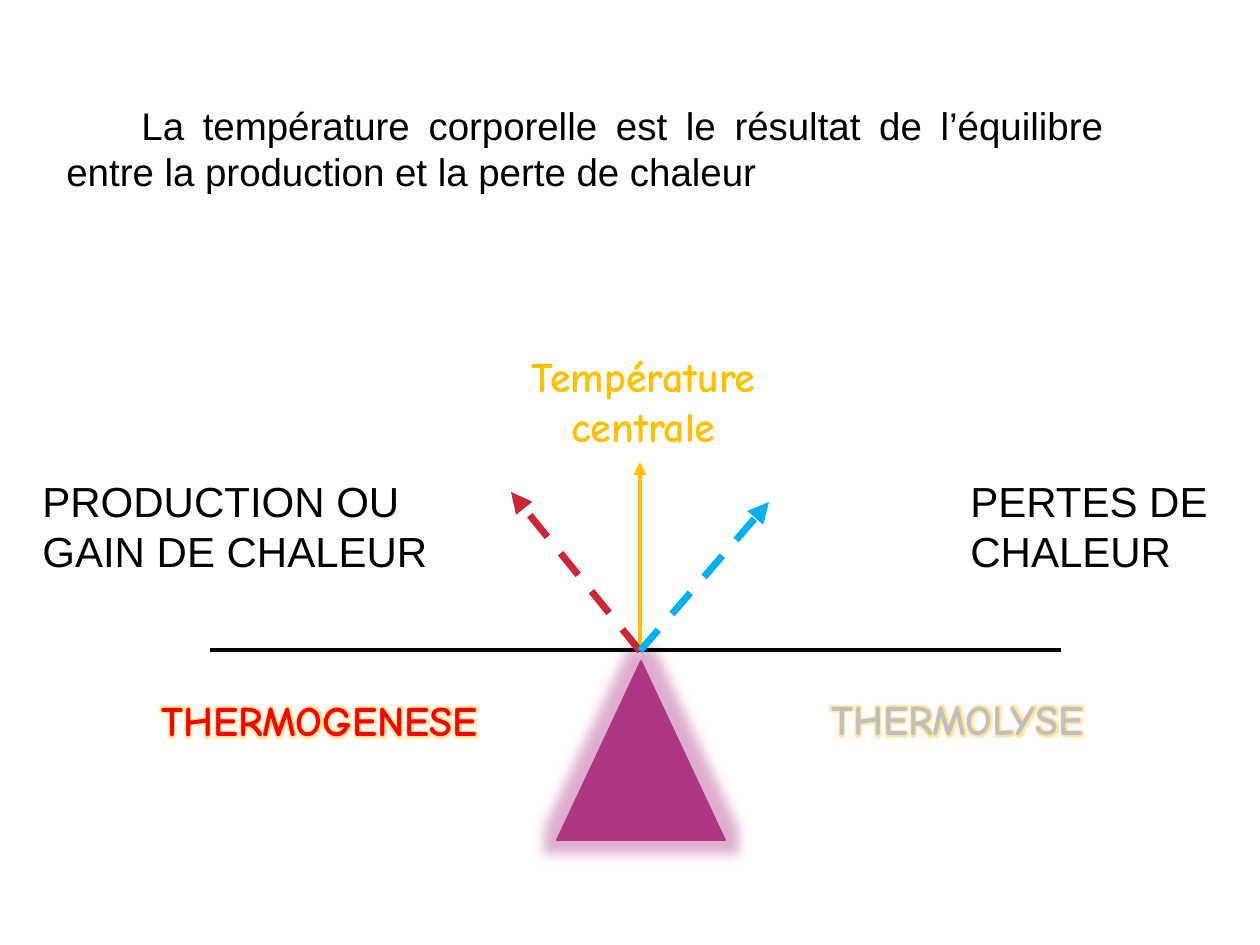
from lxml import etree
from pptx import Presentation
from pptx.dml.color import RGBColor
from pptx.enum.dml import MSO_LINE
from pptx.enum.shapes import MSO_CONNECTOR, MSO_SHAPE
from pptx.enum.text import MSO_AUTO_SIZE, PP_ALIGN
from pptx.oxml.ns import qn
from pptx.util import Pt

LEFT, MID, JUST = PP_ALIGN.LEFT, PP_ALIGN.CENTER, PP_ALIGN.JUSTIFY
DASH = MSO_LINE.DASH
SCALE = 914400 / 126
SANS, COMIC = "Arial", "Comic Neue"
COLORS = {"black": "000000", "gold": "FFC000", "red": "FF0000", "gray": "BFBFBF",
          "plum": "AC3682", "warm": "CC2636", "cool": "00B0F0"}

BASE = {"size": 24, "font": SANS, "color": "black", "align": LEFT,
        "bold": False, "wrap": True, "indent": 0, "glow": None}
TITLE = {"size": 22, "align": JUST, "indent": 75}
LABEL = {"font": COMIC, "bold": True, "wrap": False}

TEXTS = [
    ((54, 96, 1062, 105), ["La température corporelle est le résultat de l’équilibre "
                           "entre la production et la perte de chaleur"], TITLE),
    ((30, 469, 422, 113), ["PRODUCTION OU GAIN DE CHALEUR"], {}),
    ((958, 469, 268, 113), ["PERTES DE CHALEUR"], {}),
    ((500, 344, 287, 115), ["Température", "centrale"],
     {**LABEL, "color": "gold", "align": MID}),
    ((149, 688, 382, 63), ["THERMOGENESE"], {**LABEL, "color": "red", "glow": "gold"}),
    ((819, 687, 319, 63), ["THERMOLYSE"], {**LABEL, "color": "gray", "glow": "gold"}),
]

PIVOT = (557, 661, 168, 179)
BEAM = ((210, 650), (1061, 650), "black", 2.25, None, False)
NEEDLES = [
    ((640, 650), (640, 462), "gold", 2.5, None, True),
    ((640, 651), (511, 492), "warm", 4, DASH, True),
    ((640, 651), (769, 502), "cool", 4, DASH, True),
]


def px(*vals):
    return [round(v * SCALE) for v in vals]


def rgb(name):
    return RGBColor.from_string(COLORS[name])


def add_glow(effects, name, size):
    glow = etree.SubElement(effects, qn("a:glow"), rad=str(Pt(size)))
    color = etree.SubElement(glow, qn("a:srgbClr"), val=COLORS[name])
    etree.SubElement(color, qn("a:alpha"), val="40000")


def add_pivot(shapes):
    shape = shapes.add_shape(MSO_SHAPE.ISOSCELES_TRIANGLE, *px(*PIVOT))
    shape.shadow.inherit = False
    shape.fill.solid()
    shape.fill.fore_color.rgb = rgb("plum")
    shape.line.color.rgb = rgb("plum")
    shape.line.width = Pt(1)
    add_glow(shape.element.spPr.find(qn("a:effectLst")), "plum", 14)


def add_line(shapes, start, end, color, width, dash, arrow):
    item = shapes.add_connector(MSO_CONNECTOR.STRAIGHT, *px(*start, *end))
    line = item.line
    line.color.rgb = rgb(color)
    line.width = Pt(width)
    if dash:
        line.dash_style = dash
    if arrow:
        etree.SubElement(line._get_or_add_ln(), qn("a:tailEnd"), type="triangle")
    etree.SubElement(item.element.spPr, qn("a:effectLst"))


def add_text(shapes, box, rows, style):
    fmt = {**BASE, **style}
    frame = shapes.add_textbox(*px(*box)).text_frame
    frame.word_wrap = fmt["wrap"]
    frame.auto_size = MSO_AUTO_SIZE.SHAPE_TO_FIT_TEXT
    for i, row in enumerate(rows):
        para = frame.add_paragraph() if i else frame.paragraphs[0]
        para.alignment = fmt["align"]
        if fmt["indent"]:
            para._p.get_or_add_pPr().set("indent", str(px(fmt["indent"])[0]))
        run = para.add_run()
        run.text = row
        font = run.font
        values = {"size": Pt(fmt["size"]), "name": fmt["font"], "bold": fmt["bold"]}
        for key, value in values.items():
            setattr(font, key, value)
        font.color.rgb = rgb(fmt["color"])
        if fmt["glow"]:
            effects = etree.Element(qn("a:effectLst"))
            add_glow(effects, fmt["glow"], 5)
            run._r.rPr.find(qn("a:solidFill")).addnext(effects)


def main():
    deck = Presentation()
    deck.slide_width, deck.slide_height = px(1260, 945)
    shapes = deck.slides.add_slide(deck.slide_layouts[6]).shapes
    add_pivot(shapes)
    add_line(shapes, *BEAM)
    for text in TEXTS:
        add_text(shapes, *text)
    for needle in NEEDLES:
        add_line(shapes, *needle)
    deck.save("out.pptx")


if __name__ == "__main__":
    main()
